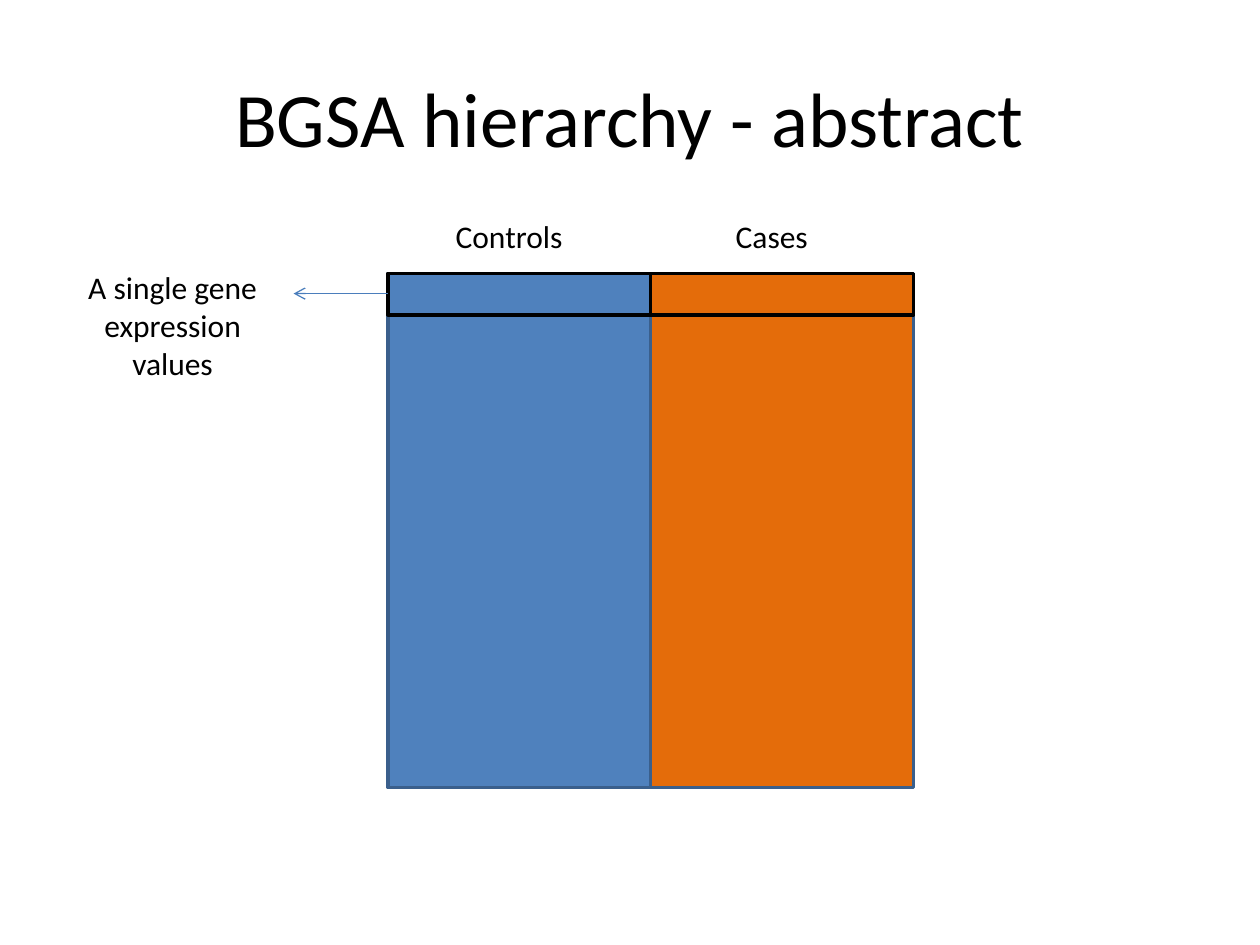
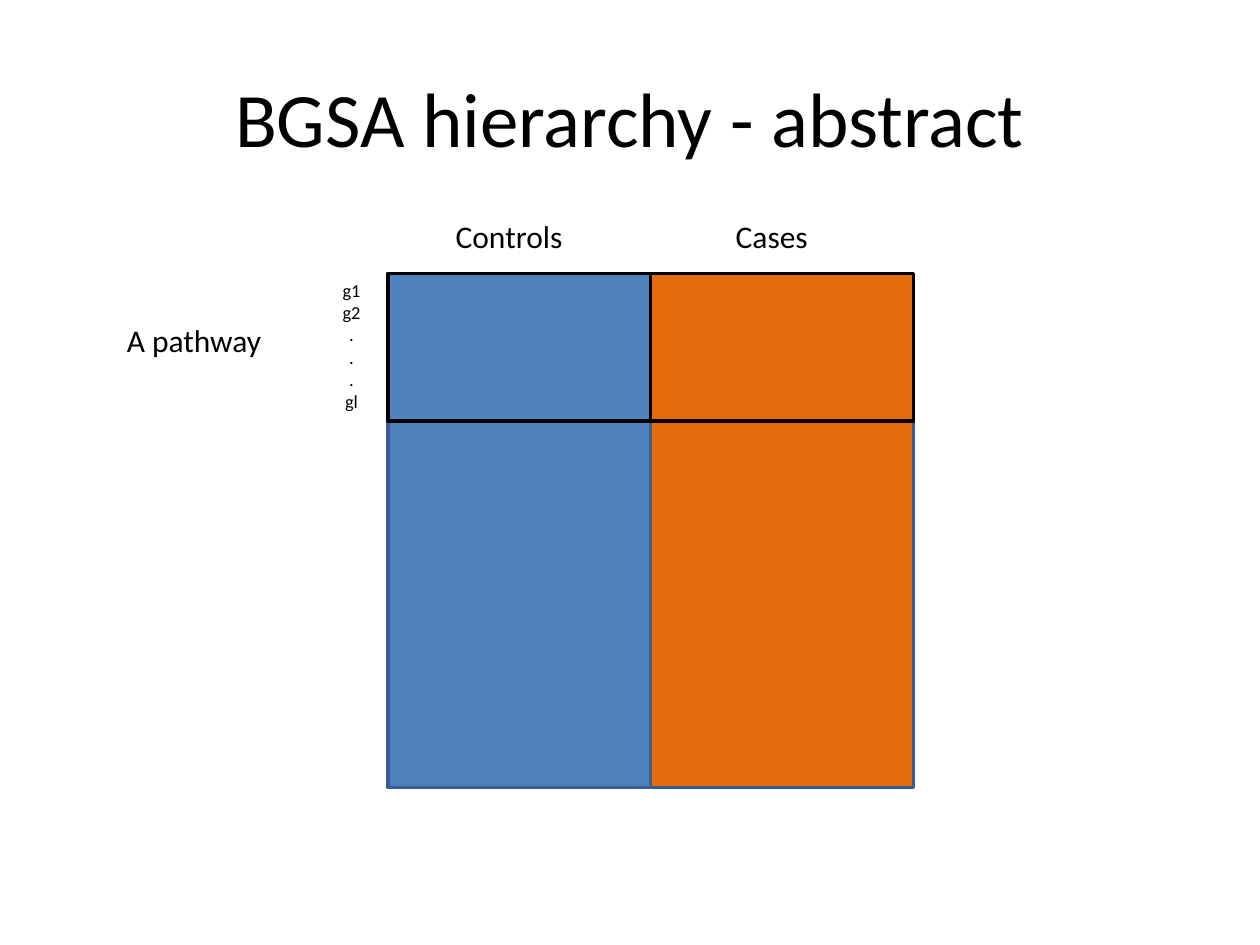
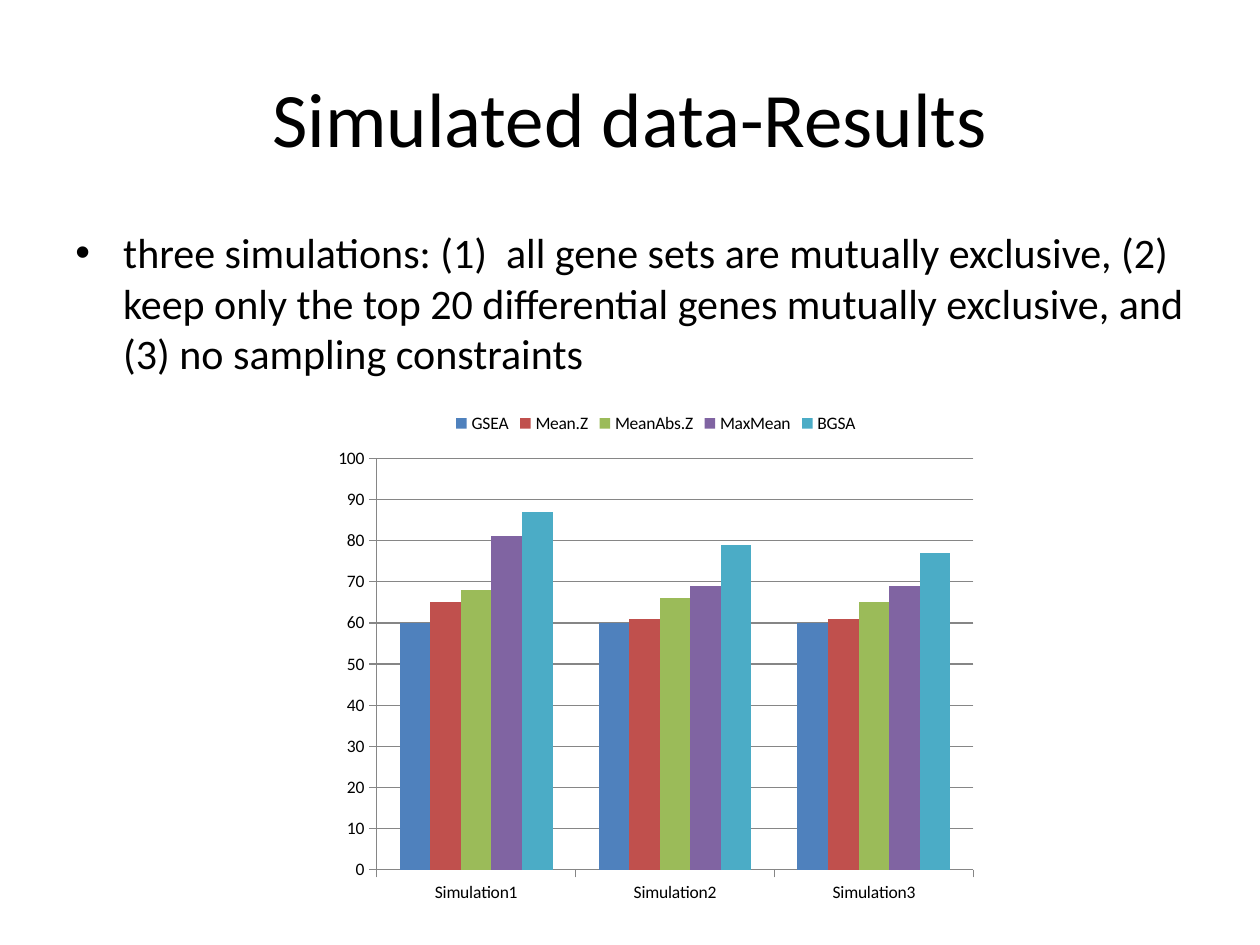
from dataclasses import dataclass

from lxml import etree
from pptx import Presentation
from pptx import util as u
from pptx.chart import data as chart_data
from pptx.dml import color
from pptx.enum import chart as chart_enum
from pptx.enum import shapes, text
from pptx.oxml import ns


@dataclass(frozen=True)
class Theme:
    font: str = "Calibri"
    ink: str = "000000"
    controls: str = "4F81BD"
    cases: str = "E46C0A"
    matrix_edge: str = "3A5F8C"
    arrow: str = "4B7EBC"
    axis: str = "868686"
    series: tuple = ("4F81BD", "C0504D", "9BBB59", "8064A2", "4BACC6")
    title_size: float = 44
    body_size: float = 24
    label_size: float = 18
    gene_size: float = 10.5
    chart_size: float = 10


THEME = Theme()
MATRIX_LEFT, MATRIX_TOP = 3.08, 2.17
COLUMN_WIDTH, MATRIX_HEIGHT = 2.085, 4.08
COLUMNS = (("Controls", THEME.controls), ("Cases", THEME.cases))


def rgb(value):
    return color.RGBColor.from_string(value)


def add_text(slide, content, left, top, width, height, *, size=THEME.label_size,
             align=text.PP_ALIGN.CENTER, anchor=text.MSO_ANCHOR.TOP, bullet=None):
    shape = slide.shapes.add_textbox(
        u.Inches(left), u.Inches(top), u.Inches(width), u.Inches(height))
    frame = shape.text_frame
    frame.word_wrap = True
    frame.vertical_anchor = anchor
    frame.text = content
    for paragraph in frame.paragraphs:
        paragraph.alignment = align
        paragraph.font.name = THEME.font
        paragraph.font.size = u.Pt(size)
        paragraph.font.color.rgb = rgb(THEME.ink)
        if bullet:
            add_bullet(paragraph, bullet)
    return shape


def add_bullet(paragraph, character, indent=0.38):
    paragraph.space_before = u.Pt(THEME.body_size * 0.2)
    properties = paragraph._p.get_or_add_pPr()
    properties.set("marL", str(u.Inches(indent)))
    properties.set("indent", str(-u.Inches(indent)))
    font = etree.Element(ns.qn("a:buFont"), typeface="Arial")
    mark = etree.Element(ns.qn("a:buChar"), char=character)
    position = 1 + properties.index(properties.find(ns.qn("a:spcBef")))
    properties[position:position] = [font, mark]


def add_title(slide, content):
    add_text(slide, content, 0.5, 0.3, 9, 1.25, size=THEME.title_size,
             anchor=text.MSO_ANCHOR.MIDDLE)


def add_block(slide, left, top, width, height, fill, edge):
    shape = slide.shapes.add_shape(
        shapes.MSO_SHAPE.RECTANGLE,
        u.Inches(left), u.Inches(top), u.Inches(width), u.Inches(height))
    shape.shadow.inherit = False
    shape.fill.solid()
    shape.fill.fore_color.rgb = rgb(fill)
    shape.line.color.rgb = rgb(edge)
    shape.line.width = u.Pt(2)


def add_matrix_row(slide, height, edge):
    for index, (name, fill) in enumerate(COLUMNS):
        add_block(slide, MATRIX_LEFT + index * COLUMN_WIDTH, MATRIX_TOP,
                  COLUMN_WIDTH, height, fill, edge)


def add_expression_matrix(slide, highlight_height):
    add_matrix_row(slide, MATRIX_HEIGHT, THEME.matrix_edge)
    for index, (name, fill) in enumerate(COLUMNS):
        add_text(slide, name, 3.25 + index * COLUMN_WIDTH, 1.67, 1.58, 0.42)
    add_matrix_row(slide, highlight_height, THEME.ink)


def add_arrow(slide, start, end):
    connector = slide.shapes.add_connector(
        shapes.MSO_CONNECTOR.STRAIGHT, *(u.Inches(value) for value in start + end))
    connector.line.color.rgb = rgb(THEME.arrow)
    connector.line.width = u.Pt(0.75)
    etree.SubElement(connector.line._get_or_add_ln(), ns.qn("a:tailEnd"), type="arrow")
    etree.SubElement(connector._element.spPr, ns.qn("a:effectLst"))


def add_column_chart(slide, categories, series, left, top, width, height):
    data = chart_data.CategoryChartData()
    data.categories = categories
    for name, values in series:
        data.add_series(name, values)
    chart = slide.shapes.add_chart(
        chart_enum.XL_CHART_TYPE.COLUMN_CLUSTERED,
        u.Inches(left), u.Inches(top), u.Inches(width), u.Inches(height), data).chart
    chart.has_title = False
    chart.font.name = THEME.font
    chart.font.size = u.Pt(THEME.chart_size)
    chart.font.color.rgb = rgb(THEME.ink)
    chart.has_legend = True
    chart.legend.position = chart_enum.XL_LEGEND_POSITION.TOP
    chart.legend.include_in_layout = False

    plot = chart.plots[0]
    plot.vary_by_categories = False
    plot.gap_width = 150
    plot.overlap = 0
    for column, fill in zip(plot.series, THEME.series):
        column.format.fill.solid()
        column.format.fill.fore_color.rgb = rgb(fill)

    value_axis = chart.value_axis
    value_axis.minimum_scale = 0
    value_axis.maximum_scale = 100
    value_axis.major_unit = 10
    value_axis.has_major_gridlines = True
    for axis in (chart.category_axis, value_axis):
        axis.major_tick_mark = chart_enum.XL_TICK_MARK.OUTSIDE
    for part in (chart.category_axis, value_axis, value_axis.major_gridlines):
        part.format.line.color.rgb = rgb(THEME.axis)
        part.format.line.width = u.Pt(0.75)


def build_gene_slide(slide):
    add_title(slide, "BGSA hierarchy - abstract")
    add_expression_matrix(slide, 0.33)
    add_arrow(slide, (MATRIX_LEFT, 2.33), (2.33, 2.33))
    add_text(slide, "A single gene expression values", 0.58, 2.08, 1.58, 1.01)


def build_pathway_slide(slide):
    add_title(slide, "BGSA hierarchy - abstract")
    add_expression_matrix(slide, 1.17)
    add_text(slide, "A pathway", 0.75, 2.5, 1.58, 0.4)
    add_text(slide, "\n".join(("g1", "g2", ".", ".", ".", "gl")),
             2.58, MATRIX_TOP, 0.42, 1.16, size=THEME.gene_size)


def build_results_slide(slide):
    add_title(slide, "Simulated data-Results")
    add_text(slide, "three simulations: (1)  all gene sets are mutually exclusive, "
             "(2) keep only the top 20 differential genes mutually exclusive, "
             "and (3) no sampling constraints",
             0.5, 1.75, 9, 4.95, size=THEME.body_size,
             align=text.PP_ALIGN.LEFT, bullet="•")
    add_column_chart(
        slide, ("Simulation1", "Simulation2", "Simulation3"),
        (("GSEA", (60, 60, 60)),
         ("Mean.Z", (65, 61, 61)),
         ("MeanAbs.Z", (68, 66, 65)),
         ("MaxMean", (81, 69, 69)),
         ("BGSA", (87, 79, 77))),
        2.58, 3.17, 5.25, 4.07)


def main():
    presentation = Presentation()
    presentation.slide_width = u.Inches(10)
    presentation.slide_height = u.Inches(7.5)
    blank = presentation.slide_layouts[6]
    for build in (build_gene_slide, build_pathway_slide, build_results_slide):
        build(presentation.slides.add_slide(blank))
    presentation.save("out.pptx")


if __name__ == "__main__":
    main()
